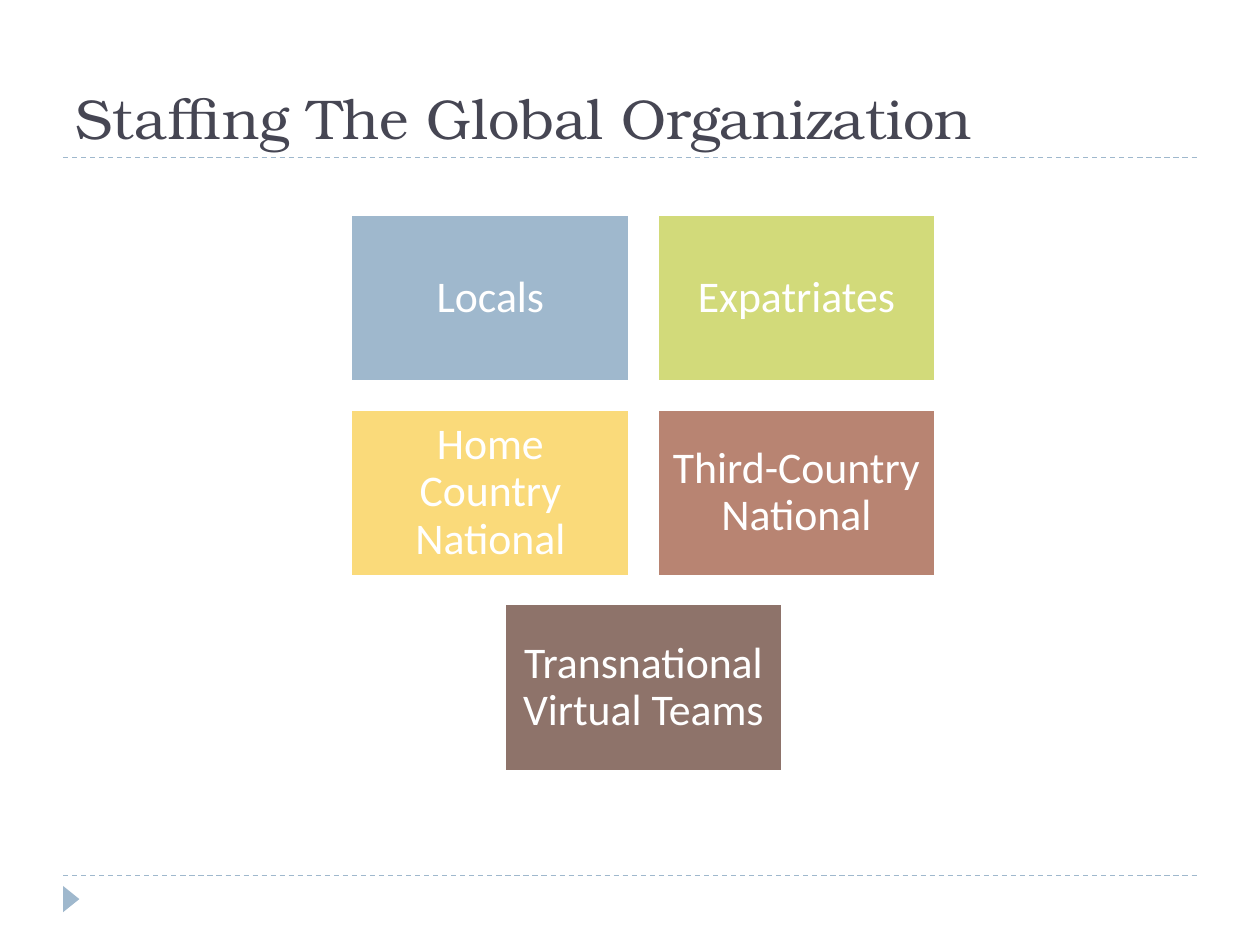
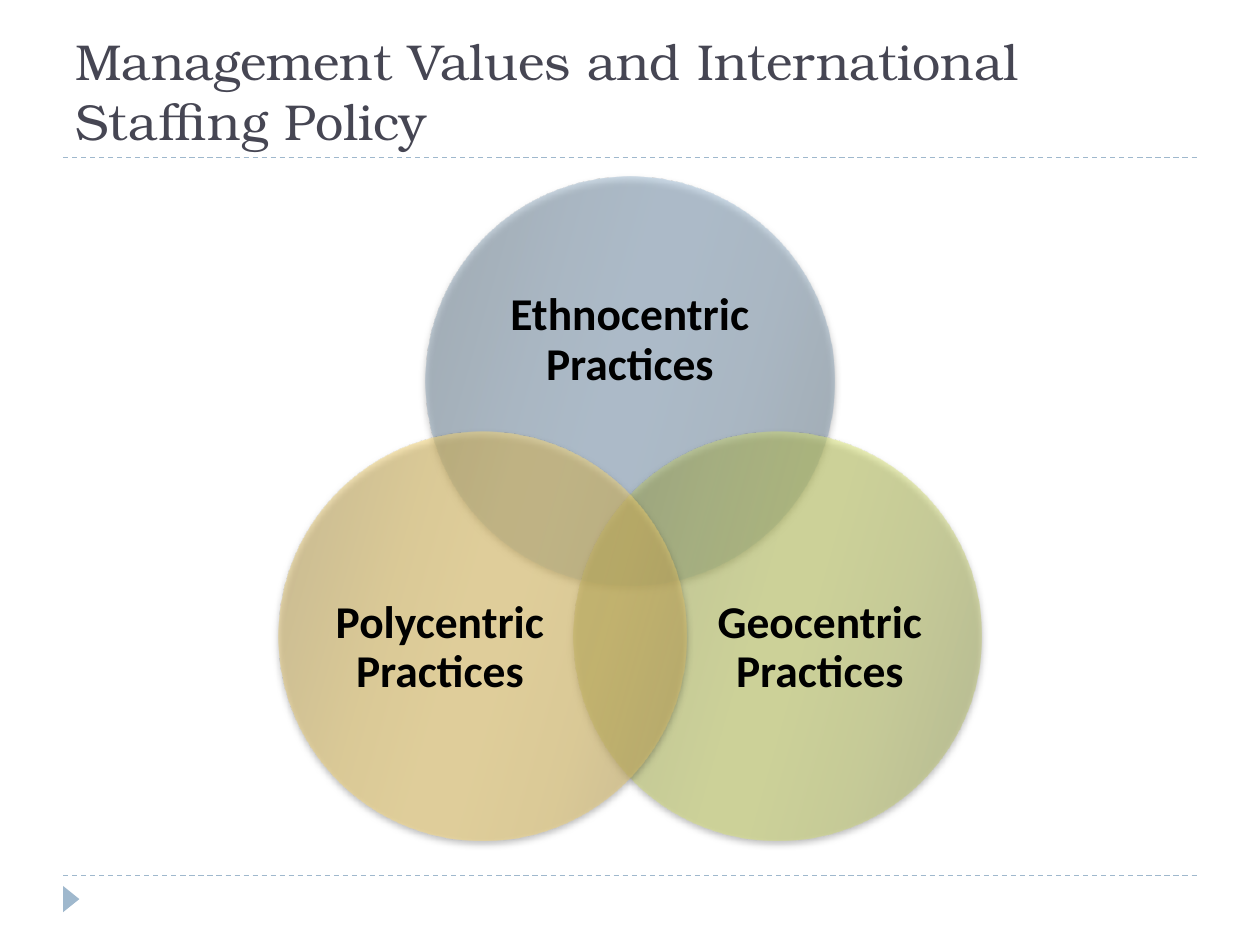
"""Build two slides on staffing the global organization."""
import math

import lxml.etree
import pptx
import pptx.dml.color
import pptx.enum.dml
import pptx.enum.shapes
import pptx.enum.text
import pptx.oxml.ns
import pptx.util

Cm = pptx.util.Cm
Pt = pptx.util.Pt
RGBColor = pptx.dml.color.RGBColor
Shape = pptx.enum.shapes.MSO_SHAPE
Anchor = pptx.enum.text.MSO_ANCHOR
Align = pptx.enum.text.PP_ALIGN
qn = pptx.oxml.ns.qn

WHITE = RGBColor(0xFF, 0xFF, 0xFF)
BLACK = RGBColor(0, 0, 0)
SLATE = RGBColor(0x46, 0x46, 0x53)
BLUE = RGBColor(0x9F, 0xB8, 0xCD)
LIME = RGBColor(0xD2, 0xDA, 0x7A)
YELLOW = RGBColor(0xFA, 0xDA, 0x7A)
CLAY = RGBColor(0xB8, 0x84, 0x72)
BROWN = RGBColor(0x8E, 0x73, 0x6A)
BLUE_SHADES = [RGBColor(0x82, 0x97, 0xA8), RGBColor(0x96, 0xB0, 0xC6), RGBColor(0x9B, 0xB8, 0xD1)]
LIME_SHADES = [RGBColor(0xAC, 0xB2, 0x64), RGBColor(0xCC, 0xD5, 0x70), RGBColor(0xD9, 0xE3, 0x71)]
GOLD_SHADES = [RGBColor(0xCD, 0xB2, 0x64), RGBColor(0xF5, 0xD3, 0x6E), RGBColor(0xFF, 0xDC, 0x75)]

STAFFING_TITLE = "Staffing The Global Organization"
STAFF_ROWS = [
    [("Locals", BLUE), ("Expatriates", LIME)],
    [("Home Country National", YELLOW), ("Third-Country National", CLAY)],
    [("Transnational Virtual Teams", BROWN)],
]
POLICY_TITLE = "Management Values and International Staffing Policy"
PRACTICES = [
    {"text": "Ethnocentric Practices", "shades": BLUE_SHADES, "angle": -90,
     "label_offset": (0, -0.81), "label_size": (6.05, 3.71)},
    {"text": "Geocentric Practices", "shades": LIME_SHADES, "angle": 30,
     "label_offset": (0.86, 0.25), "label_size": (4.93, 4.52)},
    {"text": "Polycentric Practices", "shades": GOLD_SHADES, "angle": 150,
     "label_offset": (-0.86, 0.25), "label_size": (4.93, 4.52)},
]

SLIDE_WIDTH, SLIDE_HEIGHT = 25.4, 19.05
MARGIN = 1.27
RULE_HEIGHTS = (17.65, 3.18)
TITLE_FONT = {"name": "TeX Gyre Bonum", "color": SLATE}
BOX_FONT = {"name": "Calibri", "size": Pt(25), "color": WHITE}
CIRCLE_FONT = {"name": "Calibri", "size": Pt(26), "bold": True, "color": BLACK}
BOX_WIDTH, BOX_HEIGHT, BOX_GAP = 5.61, 3.37, 0.56
GRID_CENTER, GRID_TOP = 12.97, 4.32
CIRCLE_DIAMETER, VENN_RADIUS, VENN_MIDDLE = 8.23, 3.43, 11.11
GRADIENT_STOPS = [(0, 0), (30, 1), (45, 2), (55, 2), (73, 1), (100, 0)]


def set_font(font, formats):
    """Apply a dict of format values to a font."""
    for name, value in formats.items():
        if name == "color":
            font.color.rgb = value
        else:
            setattr(font, name, value)


def write_centered(shape, text, formats, inset):
    """Write centred, wrapped text into a shape."""
    frame = shape.text_frame
    settings = {"word_wrap": True, "vertical_anchor": Anchor.MIDDLE}
    for side in ("left", "top", "right", "bottom"):
        settings[f"margin_{side}"] = Cm(inset)
    for name, value in settings.items():
        setattr(frame, name, value)
    paragraph = frame.paragraphs[0]
    paragraph.text = text
    paragraph.alignment = Align.CENTER
    paragraph.line_spacing = 0.9
    set_font(paragraph.runs[0].font, formats)


def add_plain_shape(slide, kind, left, top, width, height, color=None):
    """Add a shape without shadow or outline, filled if a colour is given."""
    shape = slide.shapes.add_shape(kind, Cm(left), Cm(top), Cm(width), Cm(height))
    shape.shadow.inherit = False
    shape.line.fill.background()
    if color is not None:
        shape.fill.solid()
        shape.fill.fore_color.rgb = color
    return shape


def add_base_slide(presentation, title_text, title_size):
    """Add a slide with the shared rules, marker and title."""
    slide = presentation.slides.add_slide(presentation.slide_layouts[5])
    for height in RULE_HEIGHTS:
        rule = slide.shapes.add_connector(
            pptx.enum.shapes.MSO_CONNECTOR.STRAIGHT,
            Cm(MARGIN), Cm(height), Cm(SLIDE_WIDTH - MARGIN), Cm(height))
        rule.line.color.rgb = BLUE
        rule.line.width = Pt(0.75)
        rule.line.dash_style = pptx.enum.dml.MSO_LINE.DASH
        lxml.etree.SubElement(rule._element.spPr, qn("a:effectLst"))
    marker = add_plain_shape(slide, Shape.ISOSCELES_TRIANGLE, 1.17, 17.96, 0.53, 0.33, BLUE)
    marker.rotation = 90
    title = slide.shapes.title
    placement = {"left": 1.27, "top": 0.43, "width": 22.86, "height": 2.74}
    for name, value in placement.items():
        setattr(title, name, Cm(value))
    frame = title.text_frame
    frame.text = title_text
    frame.word_wrap = True
    frame.auto_size = pptx.enum.text.MSO_AUTO_SIZE.NONE
    frame.vertical_anchor = Anchor.BOTTOM
    frame.paragraphs[0].alignment = Align.LEFT
    set_font(frame.paragraphs[0].runs[0].font, {**TITLE_FONT, "size": Pt(title_size)})
    return slide


def add_staff_grid(slide):
    """Place the staff boxes in rows that share one centre."""
    for row, boxes in enumerate(STAFF_ROWS):
        row_width = len(boxes) * (BOX_WIDTH + BOX_GAP) - BOX_GAP
        top = GRID_TOP + row * (BOX_HEIGHT + BOX_GAP)
        for column, (text, color) in enumerate(boxes):
            left = GRID_CENTER - row_width / 2 + column * (BOX_WIDTH + BOX_GAP)
            box = add_plain_shape(slide, Shape.RECTANGLE, left, top, BOX_WIDTH, BOX_HEIGHT, color)
            box.line.color.rgb = WHITE
            box.line.width = Pt(1.5)
            write_centered(box, text, BOX_FONT, 0.25)


def add_color(parent, color):
    """Append a half-transparent colour to an XML element."""
    element = lxml.etree.SubElement(parent, qn("a:srgbClr"), val=str(color))
    lxml.etree.SubElement(element, qn("a:alpha"), val="50000")


def style_circle(circle, shades):
    """Give a circle its translucent gradient and soft shadow."""
    circle.fill.gradient()
    circle.fill.gradient_angle = 344
    properties = circle._element.spPr
    stops = properties.find(qn("a:gradFill")).find(qn("a:gsLst"))
    for stop in list(stops):
        stops.remove(stop)
    for position, shade in GRADIENT_STOPS:
        stop = lxml.etree.SubElement(stops, qn("a:gs"), pos=str(position * 1000))
        add_color(stop, shades[shade])
    shadow = lxml.etree.SubElement(
        properties.find(qn("a:effectLst")), qn("a:outerShdw"),
        blurRad=str(Pt(4)), dist=str(Pt(2)), dir="5400000", rotWithShape="0")
    add_color(shadow, BLACK)


def add_practice_venn(slide):
    """Place three overlapping circles evenly around a centre."""
    for practice in PRACTICES:
        angle = math.radians(practice["angle"])
        center_x = SLIDE_WIDTH / 2 + VENN_RADIUS * math.cos(angle)
        center_y = VENN_MIDDLE + VENN_RADIUS * math.sin(angle)
        circle = add_plain_shape(
            slide, Shape.OVAL, center_x - CIRCLE_DIAMETER / 2, center_y - CIRCLE_DIAMETER / 2,
            CIRCLE_DIAMETER, CIRCLE_DIAMETER)
        style_circle(circle, practice["shades"])
        offset_x, offset_y = practice["label_offset"]
        width, height = practice["label_size"]
        label = slide.shapes.add_textbox(
            Cm(center_x + offset_x - width / 2), Cm(center_y + offset_y - height / 2),
            Cm(width), Cm(height))
        write_centered(label, practice["text"], CIRCLE_FONT, 0)


def main():
    """Build and save the presentation."""
    presentation = pptx.Presentation()
    presentation.slide_width = Cm(SLIDE_WIDTH)
    presentation.slide_height = Cm(SLIDE_HEIGHT)
    add_staff_grid(add_base_slide(presentation, STAFFING_TITLE, 32))
    add_practice_venn(add_base_slide(presentation, POLICY_TITLE, 28.8))
    presentation.save("out.pptx")


if __name__ == "__main__":
    main()
